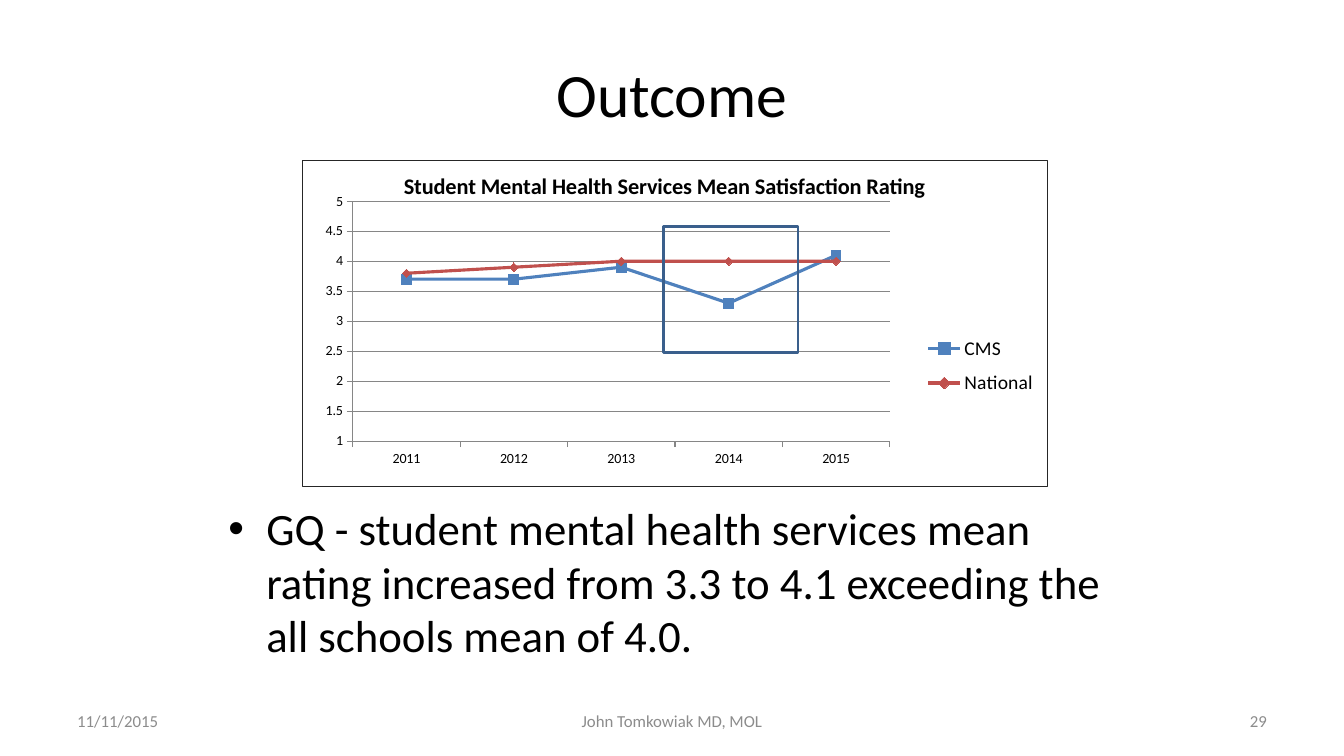
from dataclasses import dataclass
from lxml.etree import SubElement, fromstring
from pptx import Presentation
from pptx.chart.data import CategoryChartData
from pptx.dml.color import RGBColor
from pptx.enum.chart import (XL_CHART_TYPE, XL_LEGEND_POSITION, XL_MARKER_STYLE,
                             XL_TICK_MARK)
from pptx.enum.shapes import MSO_SHAPE
from pptx.enum.text import MSO_ANCHOR, PP_ALIGN
from pptx.oxml.ns import nsdecls, qn
from pptx.util import Pt


@dataclass(frozen=True)
class Theme:
    font: str = "Calibri"
    text: RGBColor = RGBColor(0, 0, 0)
    muted: RGBColor = RGBColor(0x8C, 0x8C, 0x8C)
    grid: RGBColor = RGBColor(0x86, 0x86, 0x86)
    cms: RGBColor = RGBColor(0x4F, 0x81, 0xBD)
    national: RGBColor = RGBColor(0xC0, 0x50, 0x4D)
    highlight: RGBColor = RGBColor(0x3A, 0x5F, 0x8C)
    border: str = "262626"
    title_size: int = 44
    body_size: int = 32
    chart_title_size: int = 16
    legend_size: int = 14
    axis_size: int = 10
    footer_size: int = 12


THEME = Theme()


def style_font(font, size, color=THEME.text, bold=False):
    font.name, font.size, font.bold = THEME.font, Pt(size), bold
    font.color.rgb = color


def place(shape, box):
    shape.left, shape.top, shape.width, shape.height = (Pt(v) for v in box)


def set_layout(element, **values):
    """Give a chart part a manual layout in fractions of the chart."""
    layout = element.find(qn("c:layout"))
    if layout is not None:
        element.remove(layout)
    layout = fromstring(f"<c:layout {nsdecls('c')}/>")
    overlay = element.find(qn("c:overlay"))
    if overlay is None:
        element.insert(0, layout)
    else:
        overlay.addprevious(layout)
    manual = SubElement(layout, qn("c:manualLayout"))
    for tag, value in values.items():
        SubElement(manual, qn(f"c:{tag}")).set("val", str(value))


def add_title(slide, box):
    title = slide.shapes.title
    place(title, box)
    title.text_frame.text = "Outcome"
    title.text_frame.vertical_anchor = MSO_ANCHOR.MIDDLE
    paragraph = title.text_frame.paragraphs[0]
    paragraph.alignment = PP_ALIGN.CENTER
    style_font(paragraph.runs[0].font, THEME.title_size)


def add_finding(slide, box):
    finding = slide.placeholders[1]
    place(finding, box)
    finding.text_frame.text = (
        "GQ - student mental health services mean rating increased "
        "from 3.3 to 4.1 exceeding the all schools mean of 4.0.")
    style_font(finding.text_frame.paragraphs[0].runs[0].font, THEME.body_size)


def style_axes(chart):
    for axis in (chart.category_axis, chart.value_axis):
        axis.major_tick_mark = XL_TICK_MARK.OUTSIDE
        axis.minor_tick_mark = XL_TICK_MARK.NONE
        axis.format.line.color.rgb = THEME.grid
        style_font(axis.tick_labels.font, THEME.axis_size)
    ratings = chart.value_axis
    ratings.minimum_scale, ratings.maximum_scale, ratings.major_unit = 1, 5, 0.5
    ratings.major_gridlines.format.line.color.rgb = THEME.grid
    ratings.tick_labels.number_format = "General"
    ratings.tick_labels.number_format_is_linked = False


def add_border(chart):
    space = chart.element
    if space.find(qn("c:roundedCorners")) is None:
        space.find(qn("c:chart")).addprevious(
            fromstring(f'<c:roundedCorners {nsdecls("c")} val="0"/>'))
    space.find(qn("c:chart")).addnext(fromstring(
        f'<c:spPr {nsdecls("c", "a")}><a:noFill/><a:ln w="9525"><a:solidFill>'
        f'<a:srgbClr val="{THEME.border}"/></a:solidFill></a:ln></c:spPr>'))


def add_ratings_chart(slide, box):
    data = CategoryChartData(number_format="General")
    data.categories = ["2011", "2012", "2013", "2014", "2015"]
    data.add_series("CMS", [3.7, 3.7, 3.9, 3.3, 4.1])
    data.add_series("National", [3.8, 3.9, 4, 4, 4])
    chart = slide.shapes.add_chart(
        XL_CHART_TYPE.LINE_MARKERS, *(Pt(v) for v in box), data).chart
    style_font(chart.font, THEME.axis_size)
    add_border(chart)
    style_axes(chart)

    # Series
    looks = ((THEME.cms, XL_MARKER_STYLE.SQUARE, 7),
             (THEME.national, XL_MARKER_STYLE.DIAMOND, 6))
    plot = chart.plots[0]
    plot.vary_by_categories = False
    for series, (color, marker, size) in zip(plot.series, looks):
        series.smooth = False
        series.format.line.color.rgb = color
        series.format.line.width = Pt(2.25)
        series.marker.style, series.marker.size = marker, size
        series.marker.format.fill.solid()
        series.marker.format.fill.fore_color.rgb = color
        series.marker.format.line.color.rgb = color

    # Title, legend and plot positions
    heading = chart.chart_title
    heading.text_frame.text = "Student Mental Health Services Mean Satisfaction Rating"
    style_font(heading.text_frame.paragraphs[0].runs[0].font,
               THEME.chart_title_size, bold=True)
    heading.include_in_layout = False
    chart.has_legend = True
    legend = chart.legend
    legend.position = XL_LEGEND_POSITION.RIGHT
    legend.include_in_layout = False
    style_font(legend.font, THEME.legend_size)
    set_layout(heading._element, xMode="edge", yMode="edge", x=0.13, y=0.02)
    set_layout(legend._element, xMode="edge", yMode="edge",
               x=0.83, y=0.51, w=0.16, h=0.24)
    set_layout(chart.element.find(".//" + qn("c:plotArea")), layoutTarget="inner",
               xMode="edge", yMode="edge", x=0.067, y=0.126, w=0.721, h=0.735)


def add_dip_highlight(slide, box):
    highlight = slide.shapes.add_shape(MSO_SHAPE.RECTANGLE, *(Pt(v) for v in box))
    highlight.shadow.inherit = False
    highlight.fill.background()
    highlight.line.color.rgb = THEME.highlight
    highlight.line.width = Pt(2)


def add_footer(slide, box):
    left, top, width, height = box
    parts = (("11/11/2015", 0, 224, PP_ALIGN.LEFT),
             ("John Tomkowiak MD, MOL", 280, 304, PP_ALIGN.CENTER),
             ("29", width - 224, 224, PP_ALIGN.RIGHT))
    for words, offset, part_width, alignment in parts:
        part = slide.shapes.add_textbox(
            Pt(left + offset), Pt(top), Pt(part_width), Pt(height))
        frame = part.text_frame
        frame.word_wrap = True
        frame.vertical_anchor = MSO_ANCHOR.MIDDLE
        frame.text = words
        frame.paragraphs[0].alignment = alignment
        style_font(frame.paragraphs[0].runs[0].font, THEME.footer_size, THEME.muted)


def main():
    deck = Presentation()
    deck.slide_width, deck.slide_height = Pt(960), Pt(540)
    slide = deck.slides.add_slide(deck.slide_layouts[1])
    add_title(slide, (48, 21.6, 864, 90))
    add_finding(slide, (156, 354, 648, 128))
    add_footer(slide, (48, 500.5, 864, 28.75))
    add_ratings_chart(slide, (216, 114, 532.8, 234))
    add_dip_highlight(slide, (474, 162, 96, 90))
    deck.save("out.pptx")


if __name__ == "__main__":
    main()
